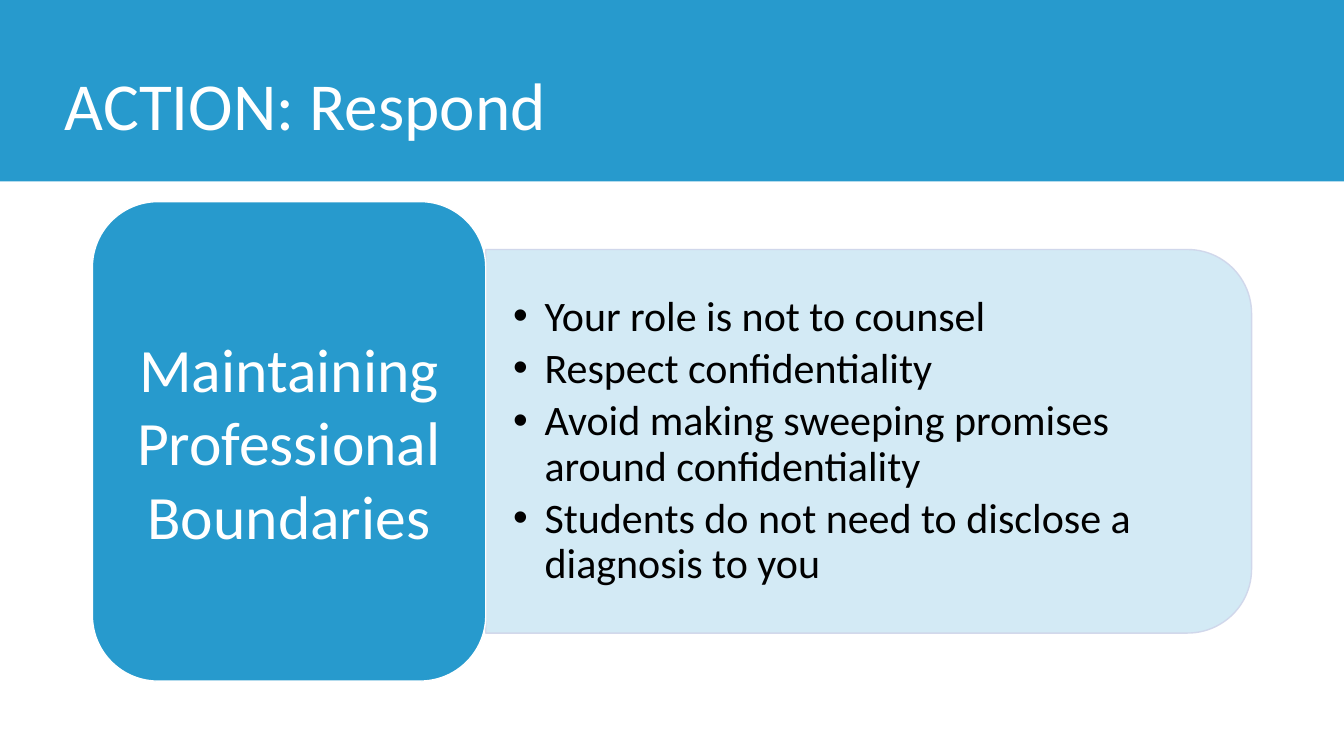
from dataclasses import dataclass

from lxml.etree import SubElement
from pptx import Presentation
from pptx.dml.color import RGBColor
from pptx.enum.shapes import MSO_SHAPE
from pptx.enum.text import MSO_ANCHOR, MSO_AUTO_SIZE, PP_ALIGN
from pptx.oxml.ns import qn
from pptx.util import Pt


@dataclass(frozen=True)
class Theme:
    font: str = "Calibri"
    blue: RGBColor = RGBColor(0x27, 0x9A, 0xCD)
    outline: RGBColor = RGBColor(0xCF, 0xD5, 0xEA)
    white: RGBColor = RGBColor(0xFF, 0xFF, 0xFF)
    black: RGBColor = RGBColor(0, 0, 0)
    title: int = 48
    label: int = 44
    body: int = 30


THEME = Theme()
WIDTH, HEIGHT = 960, 540


def place(sp, x, y, w, h):
    sp.left, sp.top, sp.width, sp.height = Pt(x), Pt(y), Pt(w), Pt(h)


def set_alpha(fmt, percent):
    color = fmt._xPr.find(qn("a:solidFill"))[0]
    SubElement(color, qn("a:alpha")).set("val", str(percent * 1000))


def add_block(s, kind, box, line=None):
    sp = s.shapes.add_shape(kind, *map(Pt, box))
    sp.shadow.inherit = False
    sp.fill.solid()
    sp.fill.fore_color.rgb = THEME.blue
    if line is None:
        sp.line.fill.background()
    else:
        sp.line.color.rgb = line
        sp.line.width = Pt(1)
    return sp


def setup_frame(sp, inset_x, inset_y):
    tf = sp.text_frame
    tf.word_wrap = True
    tf.auto_size = MSO_AUTO_SIZE.NONE
    tf.vertical_anchor = MSO_ANCHOR.MIDDLE
    tf.margin_left = tf.margin_right = Pt(inset_x)
    tf.margin_top = tf.margin_bottom = Pt(inset_y)
    return tf


def add_text(p, text, size, color, align=PP_ALIGN.LEFT):
    p.alignment = align
    r = p.add_run()
    r.text = text
    r.font.name = THEME.font
    r.font.size = Pt(size)
    r.font.color.rgb = color


def add_header(s, box, text):
    x, y, w, h = box
    add_block(s, MSO_SHAPE.RECTANGLE, box)
    title = s.shapes.title
    place(title, x + 39, y + 27.5, w - 110, h - 29)
    s.shapes._spTree.append(title._element)
    p = setup_frame(title, 7.2, 3.6).paragraphs[0]
    p.line_spacing = 0.9
    add_text(p, text, THEME.title, THEME.white)


def add_points(s, box, points):
    x, y, w, h = box
    turned = (x + (w - h) / 2, y + (h - w) / 2, h, w)
    panel = add_block(s, MSO_SHAPE.ROUND_2_SAME_RECTANGLE, turned, THEME.outline)
    panel.rotation = 90
    set_alpha(panel.fill, 20)
    set_alpha(panel.line.fill, 90)

    body = s.placeholders[1]
    place(body, x, y + 13.5, w - 13.5, h - 27)
    s.shapes._spTree.append(body._element)
    tf = setup_frame(body, 19.5, 10)
    for i, text in enumerate(points):
        p = tf.add_paragraph() if i else tf.paragraphs[0]
        pPr = p._p.get_or_add_pPr()
        pPr.set("marL", str(Pt(22.5)))
        pPr.set("indent", str(Pt(-22.5)))
        p.line_spacing = 0.9
        p.space_before = Pt(0)
        p.space_after = Pt(5)
        add_text(p, text, THEME.body, THEME.black)


def add_label(s, box, text):
    sp = add_block(s, MSO_SHAPE.ROUNDED_RECTANGLE, box, THEME.white)
    tf = setup_frame(sp, 10, 6.5)
    add_text(tf.paragraphs[0], text, THEME.label, THEME.white, PP_ALIGN.CENTER)


def main():
    prs = Presentation()
    prs.slide_width, prs.slide_height = Pt(WIDTH), Pt(HEIGHT)
    s = prs.slides.add_slide(prs.slide_layouts[1])
    add_header(s, (0, 0, WIDTH, 129.6), "ACTION: Respond")
    x, y, w, h = 66, 144, 828, 342.5
    label_w, panel_h = 281, 274
    add_points(
        s,
        (x + label_w, y + (h - panel_h) / 2, w - label_w, panel_h),
        [
            "Your role is not to counsel",
            "Respect confidentiality",
            "Avoid making sweeping promises around confidentiality",
            "Students do not need to disclose a diagnosis to you",
        ],
    )
    add_label(s, (x, y, label_w, h), "Maintaining Professional Boundaries")
    prs.save("out.pptx")


if __name__ == "__main__":
    main()
